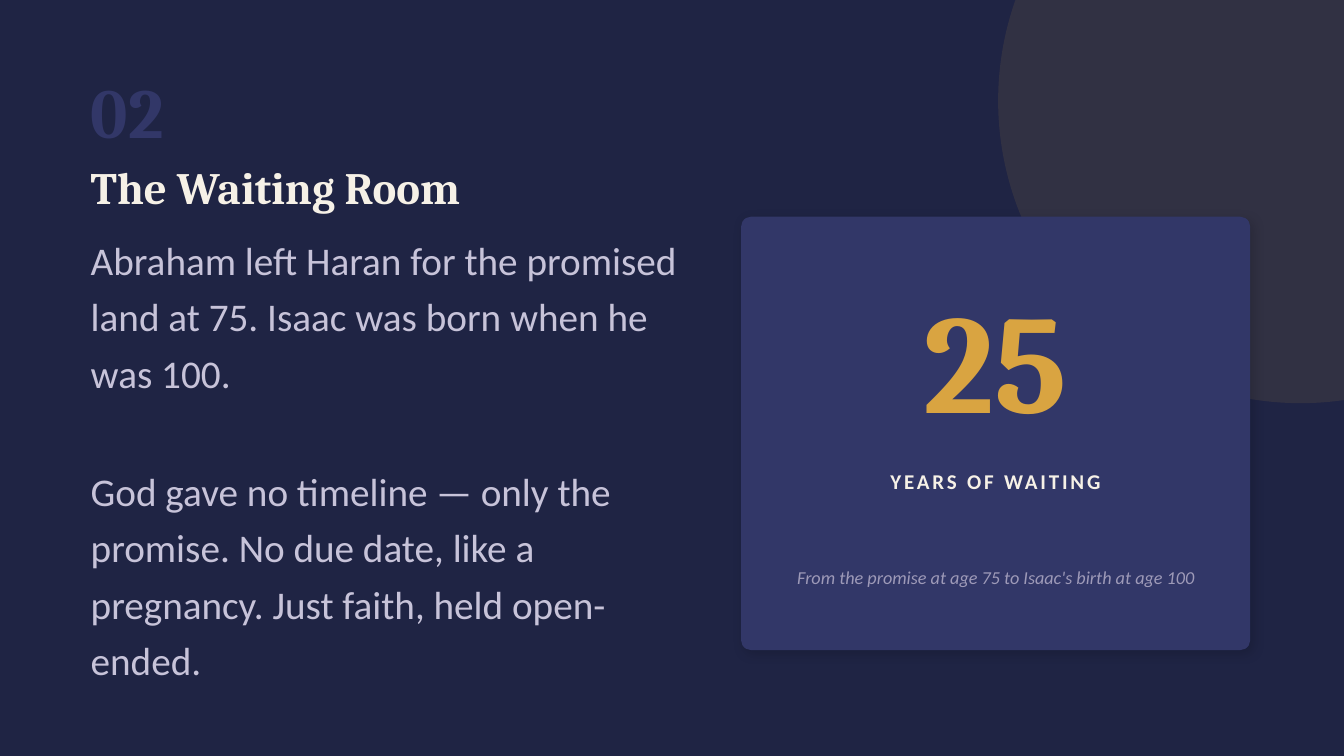
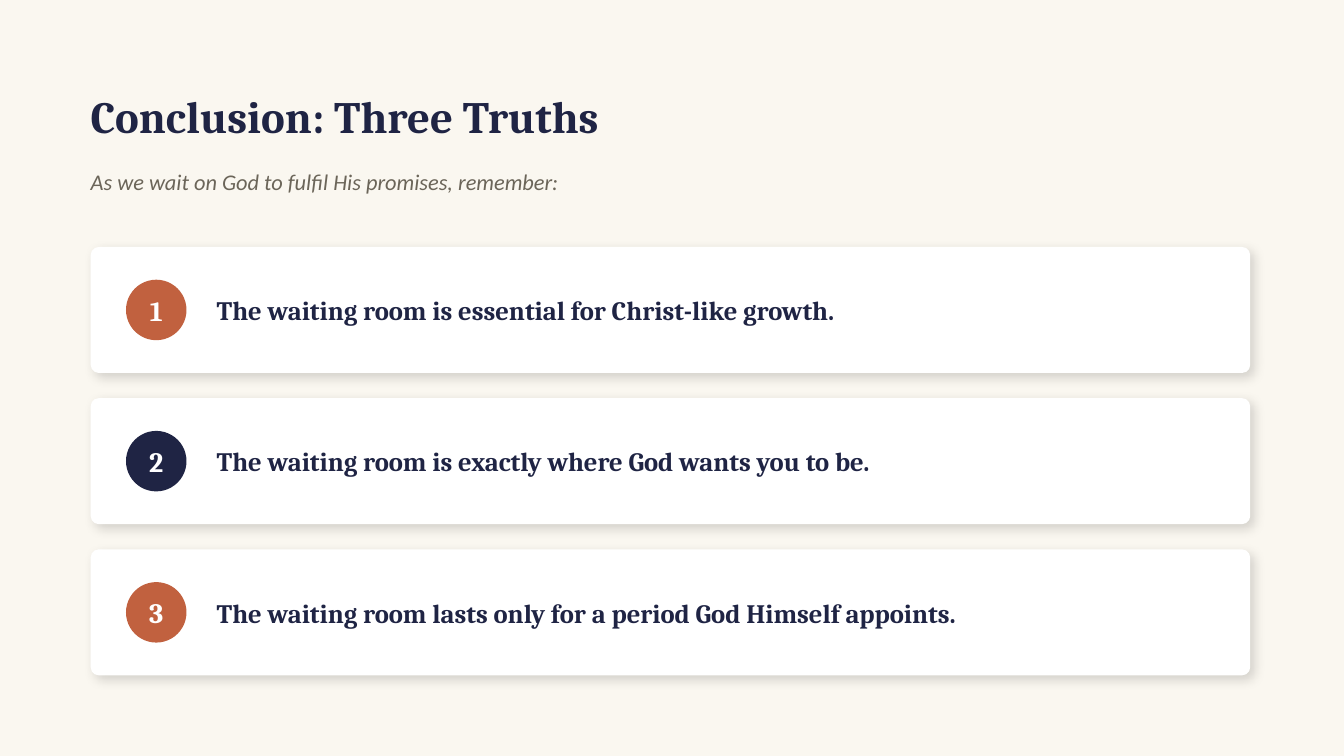
from lxml.etree import SubElement
from pptx import Presentation
from pptx.dml.color import RGBColor
from pptx.enum.shapes import MSO_SHAPE
from pptx.enum.text import MSO_ANCHOR, PP_ALIGN
from pptx.oxml.ns import qn
from pptx.util import Inches, Pt

NAVY = RGBColor(0x1F, 0x24, 0x44)
INDIGO = RGBColor(0x32, 0x37, 0x68)
GOLD = RGBColor(0xD9, 0xA4, 0x41)
RUST = RGBColor(0xC1, 0x61, 0x3F)
CREAM = RGBColor(0xF6, 0xF1, 0xE7)
PAPER = RGBColor(0xFA, 0xF7, 0xF0)
WHITE = RGBColor(0xFF, 0xFF, 0xFF)
LILAC = RGBColor(0xC7, 0xC3, 0xD9)
MUTED = RGBColor(0x9E, 0x9A, 0xB8)
STONE = RGBColor(0x6B, 0x65, 0x59)
SERIF, SANS = "Cambria", "Calibri"
MARGIN = 0.9
RADIUS = 0.1


def add_slide(prs, color):
    """Add a blank slide with a plain background."""
    s = prs.slides.add_slide(prs.slide_layouts[6])
    s.background.fill.solid()
    s.background.fill.fore_color.rgb = color
    return s


def write(sp, text, size, color, font=SANS, bold=False, italic=False,
          align=PP_ALIGN.LEFT, anchor=MSO_ANCHOR.MIDDLE, leading=None, tracking=None):
    """Write one styled run into a shape without insets."""
    tf = sp.text_frame
    tf.word_wrap = True
    tf.vertical_anchor = anchor
    tf.margin_left = tf.margin_top = tf.margin_right = tf.margin_bottom = 0
    p = tf.paragraphs[0]
    p.alignment = align
    if leading:
        p.line_spacing = leading
    r = p.add_run()
    r.text = text
    r.font.name, r.font.size, r.font.color.rgb = font, Pt(size), color
    r.font.bold, r.font.italic = bold, italic
    if tracking:
        r.font._element.set("spc", str(tracking * 100))


def add_text(s, x, y, w, h, text, size, color, **style):
    """Add a text box holding one run."""
    sp = s.shapes.add_textbox(Inches(x), Inches(y), Inches(w), Inches(h))
    write(sp, text, size, color, **style)


def add_title(s, y, h, text, color):
    """Add the slide title at the left margin."""
    add_text(s, MARGIN, y, 10.5, h, text, 32, color, font=SERIF, bold=True)


def add_filled(s, kind, x, y, w, h, color):
    """Add a flat shape without outline or shadow."""
    sp = s.shapes.add_shape(kind, Inches(x), Inches(y), Inches(w), Inches(h))
    sp.shadow.inherit = False
    sp.fill.solid()
    sp.fill.fore_color.rgb = color
    sp.line.fill.background()
    return sp


def add_card(s, x, y, w, h, color):
    """Add a rounded card with a soft shadow."""
    sp = add_filled(s, MSO_SHAPE.ROUNDED_RECTANGLE, x, y, w, h, color)
    sp.adjustments[0] = 0.8 * RADIUS / h if h < 2 else RADIUS / h
    effects = sp._element.spPr.find(qn("a:effectLst"))
    shadow = SubElement(effects, qn("a:outerShdw"), blurRad=str(Pt(8)), dist=str(Pt(3)),
                        dir=str(45 * 60000), algn="bl", rotWithShape="0")
    tint = SubElement(shadow, qn("a:srgbClr"), val="000000")
    SubElement(tint, qn("a:alpha"), val="15000")


def add_glow(s, x, y, size):
    """Add the faint gold disc in the corner."""
    sp = add_filled(s, MSO_SHAPE.OVAL, x, y, size, size, GOLD)
    tint = sp._element.spPr.find(qn("a:solidFill"))[0]
    SubElement(tint, qn("a:alpha"), val="10000")


def add_stat_card(s, x, y, w, h, value, label, note):
    """Add a card with a large figure, a label and a note."""
    add_card(s, x, y, w, h, INDIGO)
    add_text(s, x, y + 0.4, w, 2, value, 100, GOLD,
             font=SERIF, bold=True, align=PP_ALIGN.CENTER)
    add_text(s, x, y + 2.4, w, 0.45, label, 15, CREAM,
             bold=True, align=PP_ALIGN.CENTER, tracking=2)
    add_text(s, x + 0.4, y + 3, w - 0.8, 1.1, note, 13, MUTED,
             italic=True, align=PP_ALIGN.CENTER, leading=1.2)


def add_truth(s, x, y, w, h, number, text, color):
    """Add a card with a numbered badge and a statement."""
    badge = 0.6
    add_card(s, x, y, w, h, WHITE)
    sp = add_filled(s, MSO_SHAPE.OVAL, x + 0.35, y + (h - badge) / 2, badge, badge, color)
    write(sp, str(number), 20, WHITE, font=SERIF, bold=True, align=PP_ALIGN.CENTER)
    add_text(s, x + 1.25, y, w - 1.6, h, text, 19, NAVY, font=SERIF, bold=True)


def build_waiting_room(prs):
    """Build the section slide with its story and figure."""
    s = add_slide(prs, NAVY)
    add_glow(s, 9.9, -2, 6)
    add_text(s, MARGIN, 0.65, 3, 0.9, "02", 50, INDIGO, font=SERIF, bold=True)
    add_title(s, 1.4, 0.9, "The Waiting Room", CREAM)
    story = [
        (2.25, 1.3, "Abraham left Haran for the promised land at 75. "
                    "Isaac was born when he was 100."),
        (4.54, 1.4, "God gave no timeline — only the promise. No due date, "
                    "like a pregnancy. Just faith, held open-ended."),
    ]
    for y, h, text in story:
        add_text(s, MARGIN, y, 5.9, h, text, 28, LILAC, anchor=MSO_ANCHOR.TOP, leading=1.2)
    add_stat_card(s, 7.35, 2.15, 5.05, 4.3, "25", "YEARS OF WAITING",
                  "From the promise at age 75 to Isaac's birth at age 100")


def build_conclusion(prs):
    """Build the closing slide with three numbered truths."""
    s = add_slide(prs, PAPER)
    add_title(s, 0.75, 0.8, "Conclusion: Three Truths", NAVY)
    add_text(s, MARGIN, 1.55, 10, 0.5, "As we wait on God to fulfil His promises, remember:",
             16, STONE, italic=True)
    truths = [
        ("The waiting room is essential for Christ-like growth.", RUST),
        ("The waiting room is exactly where God wants you to be.", NAVY),
        ("The waiting room lasts only for a period God Himself appoints.", RUST),
    ]
    for i, (text, color) in enumerate(truths):
        add_truth(s, MARGIN, 2.45 + 1.5 * i, 11.5, 1.25, i + 1, text, color)


def main():
    """Build and save the presentation."""
    prs = Presentation()
    prs.slide_width, prs.slide_height = Inches(13.33), Inches(7.5)
    build_waiting_room(prs)
    build_conclusion(prs)
    prs.save("out.pptx")


if __name__ == "__main__":
    main()
